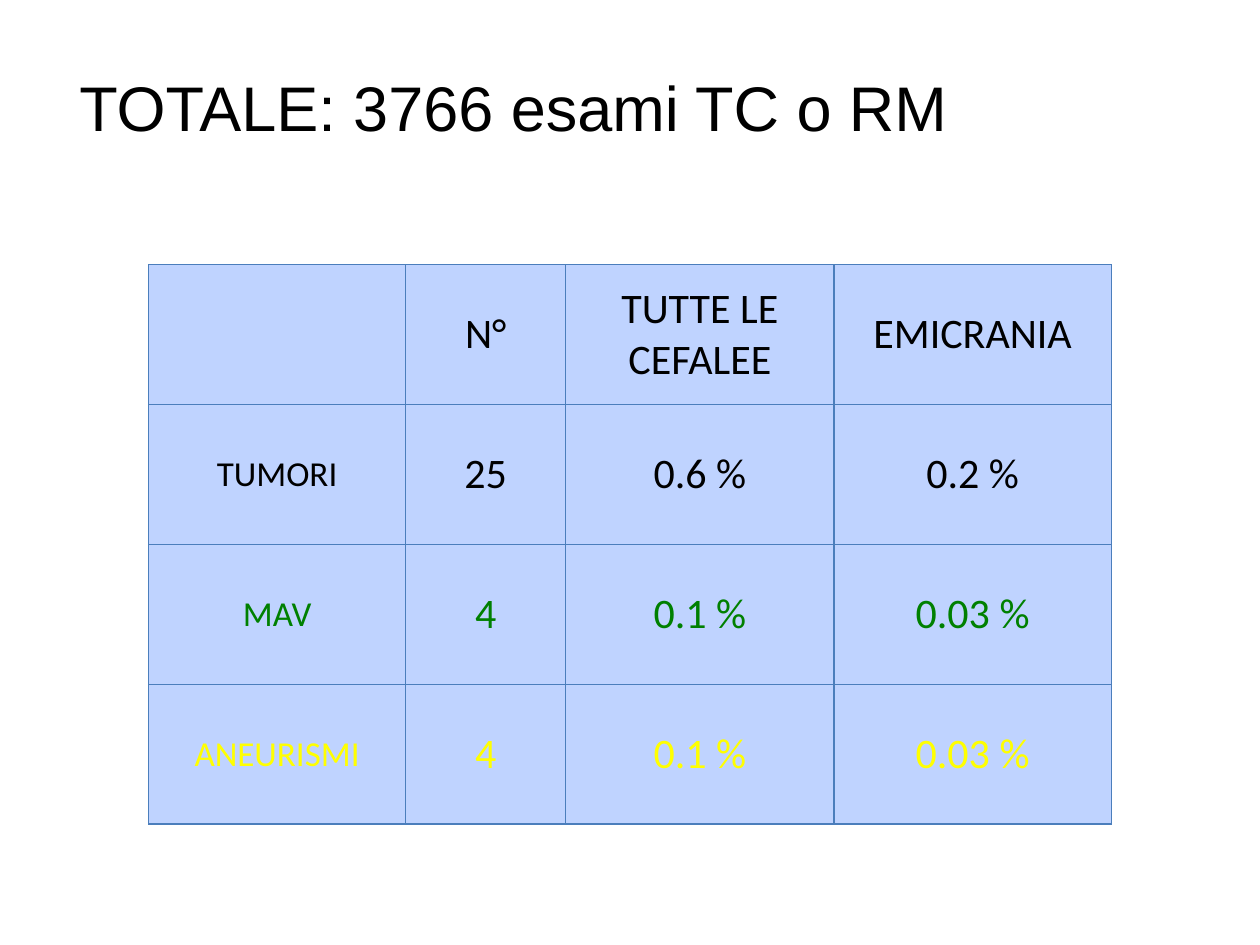
from dataclasses import dataclass

from lxml.etree import SubElement as Sub
from pptx import Presentation as Deck
from pptx.dml.color import RGBColor as Rgb
from pptx.enum.text import MSO_ANCHOR as Anchor, PP_ALIGN as Align
from pptx.oxml.ns import qn
from pptx.util import Inches, Pt


@dataclass(frozen=True)
class Theme:
    ink: str = "000000"
    green: str = "008000"
    gold: str = "FFFF00"
    fill: str = "BFD3FF"
    rule: str = "4B7EBC"
    head: str = "Arial"
    body: str = "Calibri"
    big: int = 36
    mid: int = 24
    small: int = 20
    line: float = 0.75


class Page:
    """Draws styled elements on the current slide."""

    def __init__(self, slide, theme):
        self.slide = slide
        self.theme = theme

    def label(self, frame, text, face, size, tint, align):
        para = frame.paragraphs[0]
        para.text = text
        para.alignment = align
        font = para.font
        font.name, font.size = face, Pt(size)
        font.color.rgb = Rgb.from_string(tint)

    def title(self, text, box):
        frame = self.slide.shapes.add_textbox(*map(Inches, box)).text_frame
        frame.word_wrap = True
        frame.vertical_anchor = Anchor.MIDDLE
        frame.margin_left = Inches(0.26)
        look = self.theme
        self.label(frame, text, look.head, look.big, look.ink, Align.LEFT)

    def edge(self, cell):
        props = cell._tc.get_or_add_tcPr()
        for side in "LRTB":
            line = Sub(props, qn(f"a:ln{side}"), w=str(Pt(self.theme.line)))
            paint = Sub(line, qn("a:solidFill"))
            Sub(paint, qn("a:srgbClr"), val=self.theme.rule)

    def cell(self, cell, text, size, tint):
        cell.vertical_anchor = Anchor.MIDDLE
        self.edge(cell)
        cell.fill.solid()
        cell.fill.fore_color.rgb = Rgb.from_string(self.theme.fill)
        self.label(cell.text_frame, text, self.theme.body, size, tint, Align.CENTER)

    def table(self, rows, tints, left, top, wide, high):
        frame = self.slide.shapes.add_table(
            len(rows), len(wide), Inches(left), Inches(top),
            Inches(sum(wide)), Inches(high * len(rows)))
        grid = frame.table
        for col, width in zip(grid.columns, wide):
            col.width = Inches(width)
        for row, texts, tint in zip(grid.rows, rows, tints):
            row.height = Inches(high)
            for i, (cell, text) in enumerate(zip(row.cells, texts)):
                size = self.theme.mid if i else self.theme.small
                self.cell(cell, text, size, tint)


def main():
    deck = Deck()
    deck.slide_width, deck.slide_height = Inches(10), Inches(7.5)
    look = Theme()
    page = Page(deck.slides.add_slide(deck.slide_layouts[6]), look)
    page.title("TOTALE: 3766 esami TC o RM", (0.37, 0.3, 9.26, 1.08))
    rows = [
        ("", "N°", "TUTTE LE CEFALEE", "EMICRANIA"),
        ("TUMORI", "25", "0.6 %", "0.2 %"),
        ("MAV", "4", "0.1 %", "0.03 %"),
        ("ANEURISMI", "4", "0.1 %", "0.03 %"),
    ]
    tints = (look.ink, look.ink, look.green, look.gold)
    page.table(rows, tints, 1.18, 2.1, (2.04, 1.27, 2.13, 2.2), 1.11)
    deck.save("out.pptx")


if __name__ == "__main__":
    main()
